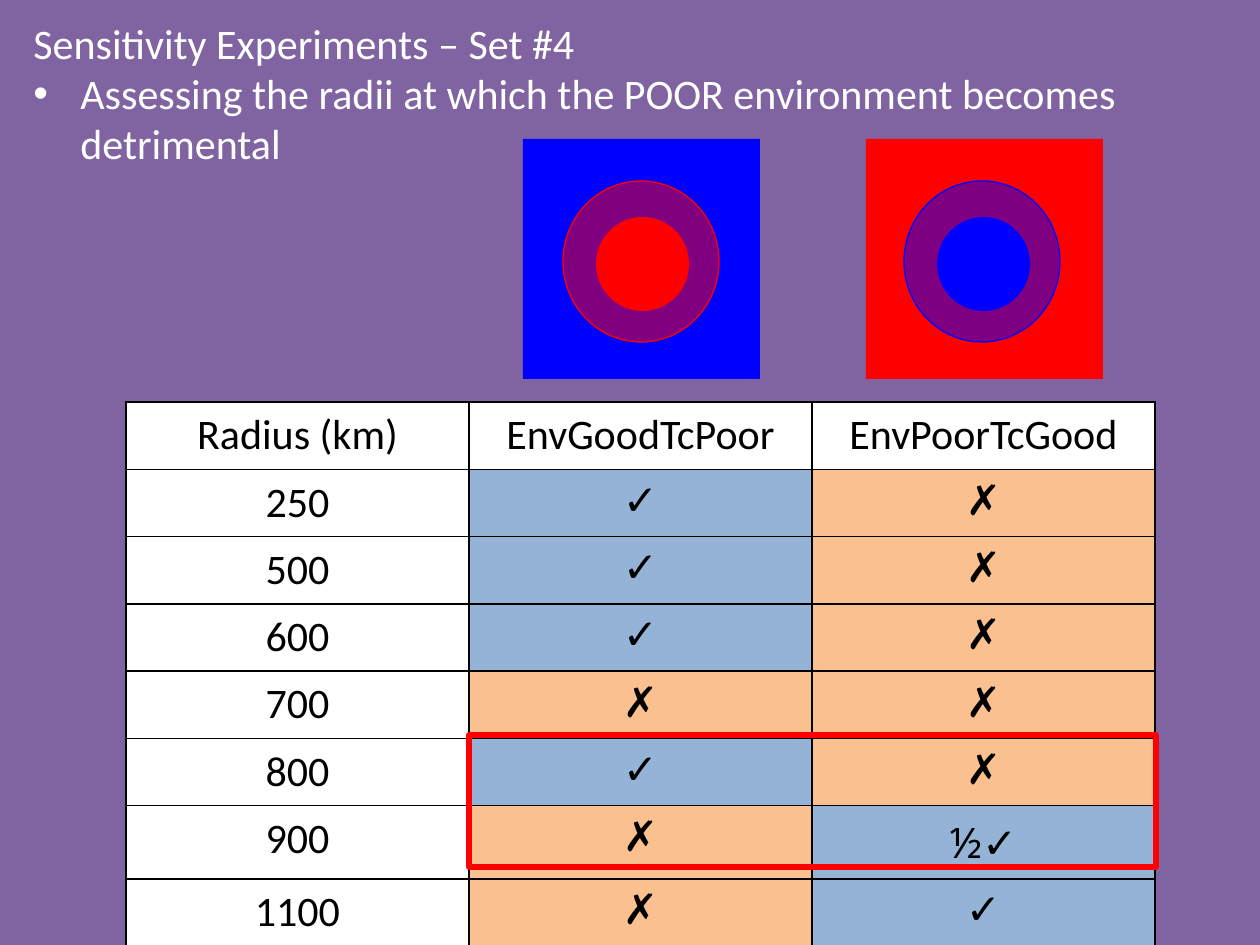
from lxml.etree import SubElement
from pptx import Presentation
from pptx.dml.color import RGBColor
from pptx.enum.shapes import MSO_SHAPE
from pptx.enum.text import MSO_AUTO_SIZE, PP_ALIGN
from pptx.oxml import parse_xml
from pptx.oxml.ns import nsdecls, qn
from pptx.util import Pt

PX = 914400 / 126

PURPLE = RGBColor(0x80, 0x64, 0xA2)
WHITE = RGBColor(0xFF, 0xFF, 0xFF)
BLACK = RGBColor(0x00, 0x00, 0x00)
RED = RGBColor(0xFF, 0x00, 0x00)
BLUE = RGBColor(0x00, 0x00, 0xFF)
PALE_BLUE = RGBColor(0x95, 0xB3, 0xD7)
PALE_ORANGE = RGBColor(0xFA, 0xC0, 0x90)


def add_text(paragraph, text, font="Calibri", color=BLACK):
    run = paragraph.add_run()
    run.text = text
    run.font.name = font
    run.font.size = Pt(24)
    run.font.color.rgb = color


def add_figure(parent, kind, box, fill=None, alpha=None, line=None, width=0.75):
    """Add a preset shape; box is left, top, width, height in px, alpha a percentage."""
    figure = parent.add_shape(kind, *(round(v * PX) for v in box))
    figure.shadow.inherit = False
    if fill is None:
        figure.fill.background()
    else:
        figure.fill.solid()
        figure.fill.fore_color.rgb = fill
    if alpha is not None:
        rgb = figure.fill._xPr.find(qn("a:solidFill")).find(qn("a:srgbClr"))
        SubElement(rgb, qn("a:alpha"), val=str(alpha * 1000))
    if line is None:
        figure.line.fill.background()
    else:
        figure.line.color.rgb = line
        figure.line.width = Pt(width)


prs = Presentation()
prs.slide_width = round(1260 * PX)
prs.slide_height = round(945 * PX)
slide = prs.slides.add_slide(prs.slide_layouts[6])
slide.background.fill.solid()
slide.background.fill.fore_color.rgb = PURPLE

# Results by radius
headings = ["Radius (km)", "EnvGoodTcPoor", "EnvPoorTcGood"]
results = [
    ("250", "✓", "✗"),
    ("500", "✓", "✗"),
    ("600", "✓", "✗"),
    ("700", "✗", "✗"),
    ("800", "✓", "✗"),
    ("900", "✗", "½✓"),
    ("1100", "✗", "✓"),
]
mark_fonts = {"✓": "Arial", "✗": "Arial", "½": "Noto Sans"}
rows = [headings, *results]
table = slide.shapes.add_table(
    len(rows), len(headings),
    *(round(v * PX) for v in (126, 402, 1029, 63 * len(rows)))).table
for column in table.columns:
    column.width = round(343 * PX)

for r, row in enumerate(rows):
    for c, value in enumerate(row):
        cell = table.cell(r, c)
        cell.margin_left = cell.margin_right = round(15 * PX)
        cell.margin_top = cell.margin_bottom = round(8 * PX)
        paragraph = cell.text_frame.paragraphs[0]
        paragraph.alignment = PP_ALIGN.CENTER
        if r == 0 or c == 0:
            fill = WHITE
            add_text(paragraph, value)
        else:
            fill = PALE_BLUE if "✓" in value else PALE_ORANGE
            for mark in value:
                add_text(paragraph, mark, mark_fonts[mark])
        properties = cell._tc.get_or_add_tcPr()
        for side in ("lnL", "lnR", "lnT", "lnB"):
            properties.append(parse_xml(
                f'<a:{side} {nsdecls("a")} w="12700"><a:solidFill>'
                f'<a:srgbClr val="{BLACK}"/></a:solidFill></a:{side}>'))
        cell.fill.solid()
        cell.fill.fore_color.rgb = fill

# Environment squares, each with a blended ring around a core
diagrams = [(866, 904, RED, BLUE), (523, 563, BLUE, RED)]
for square_left, ring_left, environment, core in diagrams:
    diagram = slide.shapes.add_group_shape().shapes
    add_figure(diagram, MSO_SHAPE.RECTANGLE, (square_left, 139, 237, 240), environment)
    add_figure(diagram, MSO_SHAPE.OVAL, (ring_left, 181, 156, 161), core, alpha=50, line=core)
    add_figure(diagram, MSO_SHAPE.OVAL, (ring_left + 33, 217, 93, 94), core)

# Title and bullet
heading = slide.shapes.add_textbox(
    *(round(v * PX) for v in (21, 11, 1230, 165))).text_frame
heading.word_wrap = True
heading.auto_size = MSO_AUTO_SIZE.SHAPE_TO_FIT_TEXT
add_text(heading.paragraphs[0], "Sensitivity Experiments – Set #4", color=WHITE)
bullet = heading.add_paragraph()
indent = round(47 * PX)
bullet_properties = bullet._p.get_or_add_pPr()
bullet_properties.set("marL", str(indent))
bullet_properties.set("indent", str(-indent))
SubElement(bullet_properties, qn("a:buFont"), typeface="Arial")
SubElement(bullet_properties, qn("a:buChar"), char="•")
add_text(bullet, "Assessing the radii at which the POOR environment becomes detrimental",
         color=WHITE)

# Highlight around the 800 and 900 km results
add_figure(slide.shapes, MSO_SHAPE.RECTANGLE, (469, 735, 687, 132), line=RED, width=3)

prs.save("out.pptx")
